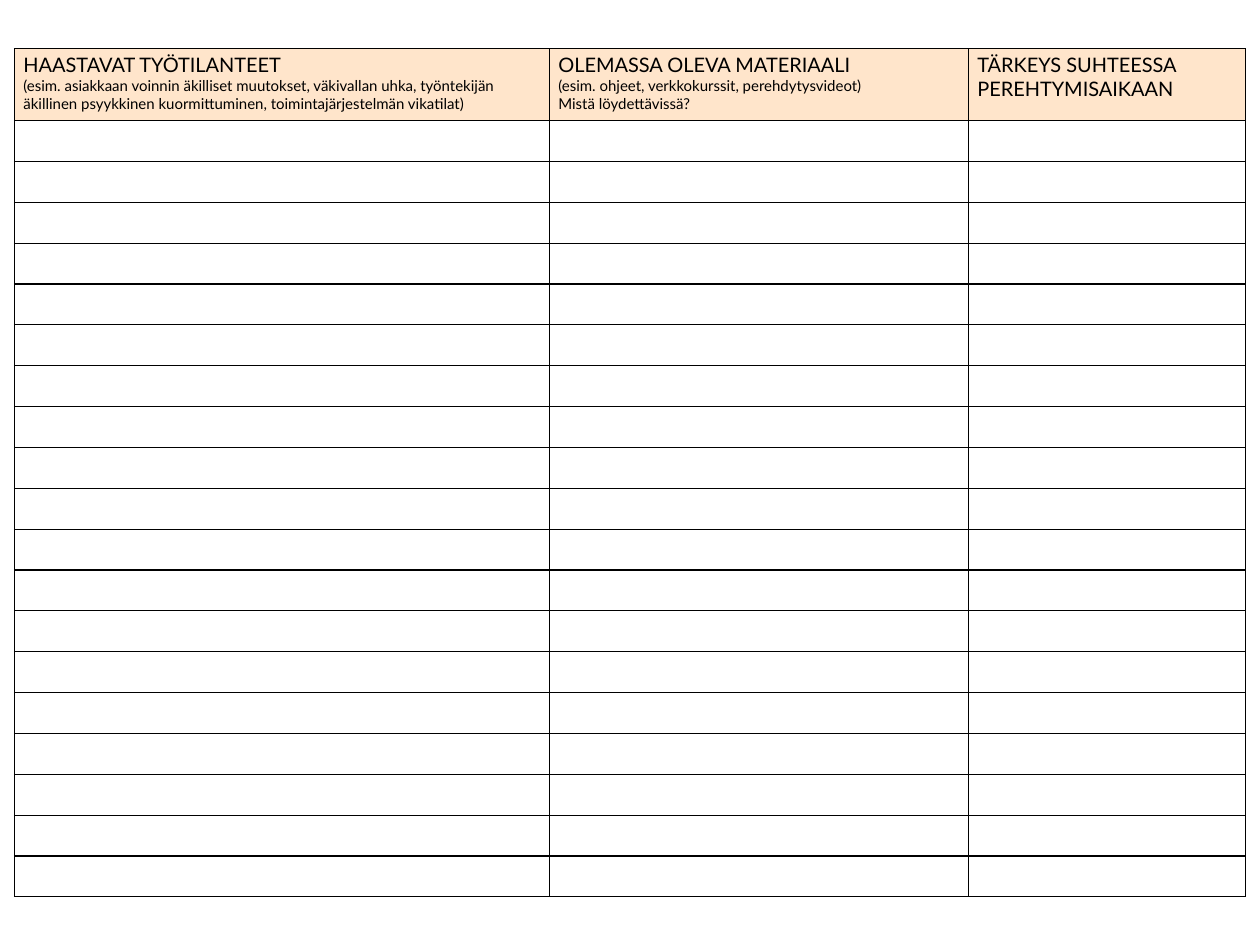
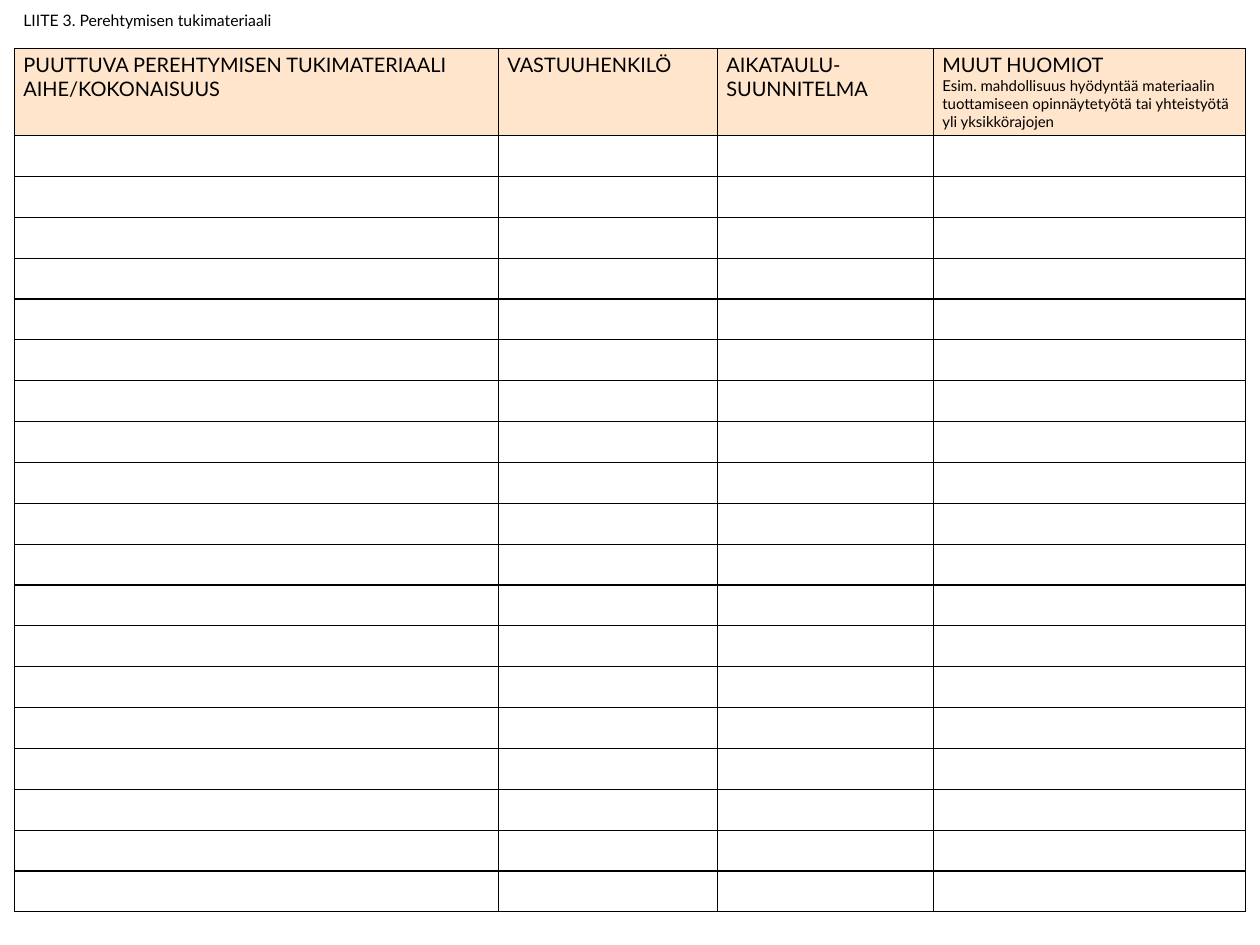
from lxml import etree
from pptx import Presentation
from pptx import util as u
from pptx.dml.color import RGBColor
from pptx.enum import text
from pptx.oxml import ns

FONT, BLACK, HEADER_FILL = "Lato", "000000", "FFCC99"
HEADING, DETAIL = 16, 12
BODY_ROWS, ROW_HEIGHT = 19, 32.7
LEFT, TOP = 11.5, 38.9
TITLE_ONLY, BLANK = 5, 6

# A header is a list of paragraphs; a paragraph is a list of lines (text, size).
SLIDES = [
    {
        "title": None,
        "header_height": 57.6,
        "columns": [
            (428, [
                [("HAASTAVAT TYÖTILANTEET", HEADING)],
                [("(esim. asiakkaan voinnin äkilliset muutokset, väkivallan uhka, "
                  "työntekijän äkillinen psyykkinen kuormittuminen, "
                  "toimintajärjestelmän vikatilat)", DETAIL)],
            ]),
            (335.2, [
                [("OLEMASSA OLEVA MATERIAALI", HEADING),
                 ("(esim. ohjeet, verkkokurssit, perehdytysvideot)", DETAIL)],
                [("Mistä löydettävissä?", DETAIL)],
            ]),
            (221.6, [[("TÄRKEYS SUHTEESSA PEREHTYMISAIKAAN", HEADING)]]),
        ],
    },
    {
        "title": "LIITE 3. Perehtymisen tukimateriaali",
        "header_height": 69.6,
        "columns": [
            (387.2, [
                [("PUUTTUVA PEREHTYMISEN TUKIMATERIAALI", HEADING)],
                [("AIHE/KOKONAISUUS", HEADING)],
            ]),
            (175.2, [[("VASTUUHENKILÖ", HEADING)]]),
            (172.8, [[("AIKATAULU-SUUNNITELMA", HEADING)]]),
            (249.6, [
                [("MUUT HUOMIOT", HEADING)],
                [("Esim. mahdollisuus hyödyntää materiaalin tuottamiseen "
                  "opinnäytetyötä tai yhteistyötä yli yksikkörajojen", DETAIL)],
            ]),
        ],
    },
]


def color(value):
    return RGBColor.from_string(value)


def set_attributes(target, values):
    for name, value in values.items():
        setattr(target, name, value)


def add_run(paragraph, words, size):
    run = paragraph.add_run()
    run.text = words
    set_attributes(run.font, {"name": FONT, "size": u.Pt(size), "bold": False})
    run.font.color.rgb = color(BLACK)


def add_borders(cell):
    properties = cell._tc.get_or_add_tcPr()
    for position, side in enumerate(("lnL", "lnR", "lnT", "lnB")):
        line = etree.Element(ns.qn(f"a:{side}"), w=str(u.Pt(1)))
        fill = etree.SubElement(line, ns.qn("a:solidFill"))
        etree.SubElement(fill, ns.qn("a:srgbClr"), val=BLACK)
        properties.insert(position, line)


def fill_header(cell, paragraphs):
    """Tint the cell at half opacity and write its lines."""
    cell.fill.solid()
    cell.fill.fore_color.rgb = color(HEADER_FILL)
    tint = cell._tc.tcPr.find(".//" + ns.qn("a:srgbClr"))
    etree.SubElement(tint, ns.qn("a:alpha"), val="50000")
    frame = cell.text_frame
    for index, lines in enumerate(paragraphs):
        paragraph = frame.add_paragraph() if index else frame.paragraphs[0]
        for number, (words, size) in enumerate(lines):
            if number:
                paragraph.add_line_break()
            add_run(paragraph, words, size)


def add_form(slide, columns, header_height):
    widths = [width for width, _ in columns]
    heights = [header_height] + [ROW_HEIGHT] * BODY_ROWS
    table = slide.shapes.add_table(
        len(heights), len(widths), u.Pt(LEFT), u.Pt(TOP),
        u.Pt(sum(widths)), u.Pt(sum(heights))).table
    set_attributes(table, {"first_row": False, "horz_banding": False})
    for column, width in zip(table.columns, widths):
        column.width = u.Pt(width)
    for row, height in zip(table.rows, heights):
        row.height = u.Pt(height)
    for cell, (_, paragraphs) in zip(table.rows[0].cells, columns):
        fill_header(cell, paragraphs)
    for index, cell in enumerate(table.iter_cells()):
        if index >= len(widths):
            cell.fill.background()
        add_borders(cell)


def format_title(title, words):
    set_attributes(title, {"left": u.Pt(LEFT), "top": u.Pt(0),
                           "width": u.Pt(984.8), "height": u.Pt(33.8)})
    set_attributes(title.text_frame, {"vertical_anchor": text.MSO_ANCHOR.MIDDLE,
                                      "auto_size": text.MSO_AUTO_SIZE.NONE,
                                      "word_wrap": True})
    paragraph = title.text_frame.paragraphs[0]
    set_attributes(paragraph, {"alignment": text.PP_ALIGN.LEFT, "line_spacing": 0.9})
    add_run(paragraph, words, 12.6)


def main():
    presentation = Presentation()
    set_attributes(presentation, {"slide_width": u.Pt(1008), "slide_height": u.Pt(756)})
    for content in SLIDES:
        layout = TITLE_ONLY if content["title"] else BLANK
        slide = presentation.slides.add_slide(presentation.slide_layouts[layout])
        if content["title"]:
            format_title(slide.shapes.title, content["title"])
        add_form(slide, content["columns"], content["header_height"])
    presentation.save("out.pptx")


if __name__ == "__main__":
    main()
